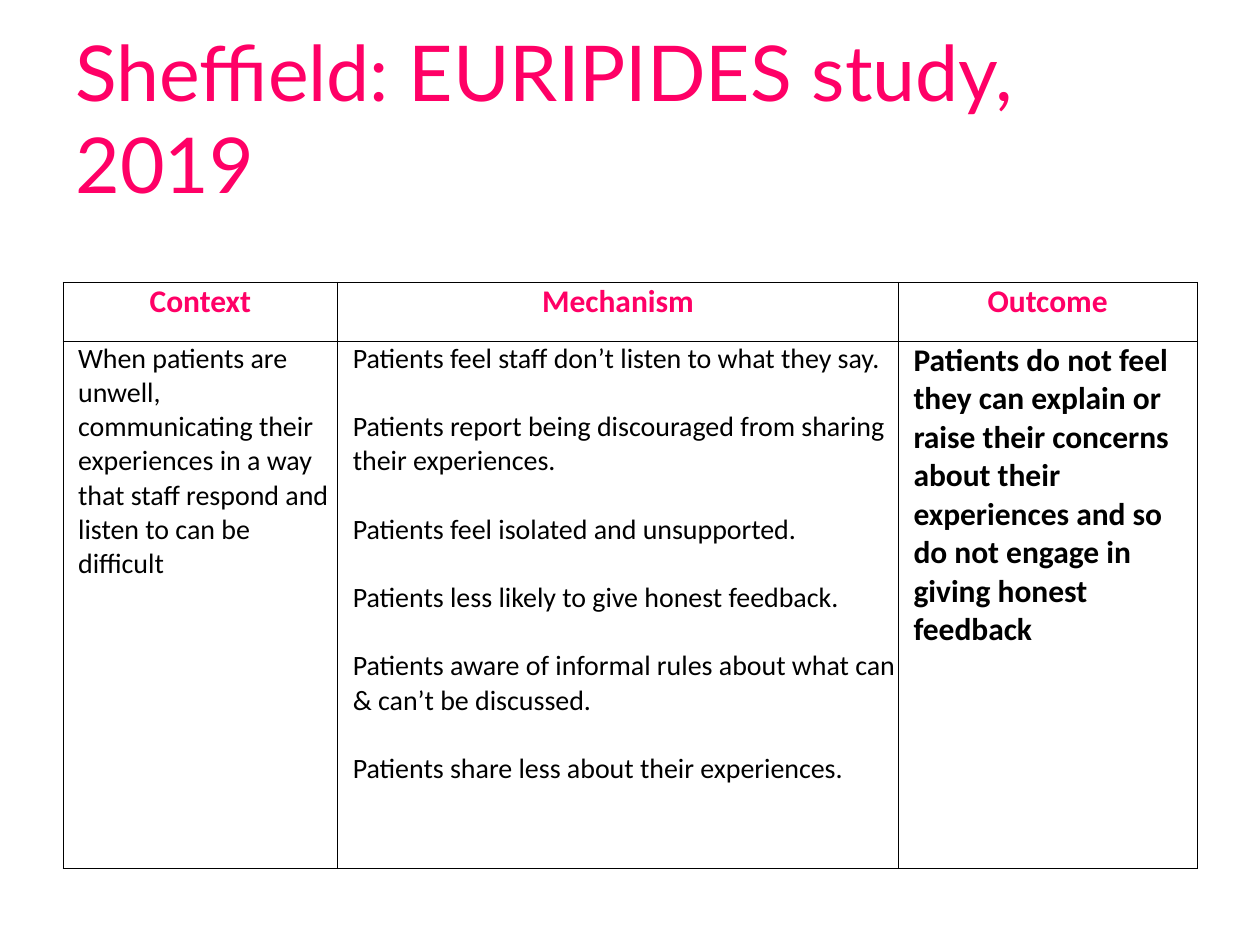
from lxml.etree import SubElement as Sub
from pptx import Presentation
from pptx.dml.color import RGBColor as Rgb
from pptx.enum.text import MSO_ANCHOR as Anchor, PP_ALIGN as Align
from pptx.oxml.ns import qn
from pptx.util import Inches, Pt

HUES = {"pink": "FF0066", "black": "000000"}
TITLE = "Sheffield: EURIPIDES study, 2019"
HEADS = ["Context", "Mechanism", "Outcome"]
BODY = [
    ["When patients are unwell, communicating their experiences in a way "
     "that staff respond and listen to can be difficult"],
    ["Patients feel staff don’t listen to what they say.",
     "Patients report being discouraged from sharing their experiences.",
     "Patients feel isolated and unsupported.",
     "Patients less likely to give honest feedback.",
     "Patients aware of informal rules about what can & can’t be discussed.",
     "Patients share less about their experiences."],
    ["Patients do not feel they can explain or raise their concerns about "
     "their experiences and so do not engage in giving honest feedback"],
]
STYLES = [{"size": 16}, {"size": 16, "gap": 19.5}, {"size": 18, "bold": True}]
WIDTHS = [2.18, 4.45, 2.37]
HEIGHTS = [0.47, 4.18]
LEFT, TOP = 0.5, 2.24


def write(frame, lines, size, hue="black", font="Calibri", bold=False,
          align=Align.LEFT, indent=0, gap=0):
    for i, line in enumerate(lines):
        para = frame.add_paragraph() if i else frame.paragraphs[0]
        para.alignment = align
        para.space_before = Pt(gap if i else 0)
        para._p.get_or_add_pPr().set("marL", str(Inches(indent)))
        run = para.add_run()
        run.text = line
        run.font.name = font
        run.font.size = Pt(size)
        run.font.bold = bold
        run.font.color.rgb = Rgb.from_string(HUES[hue])


def frame_cell(cell):
    cell.margin_left = cell.margin_right = 0
    cell.margin_top = cell.margin_bottom = 0
    props = cell._tc.get_or_add_tcPr()
    for side in ("a:lnL", "a:lnR", "a:lnT", "a:lnB"):
        edge = Sub(props, qn(side), w=str(Pt(0.5)))
        fill = Sub(edge, qn("a:solidFill"))
        Sub(fill, qn("a:srgbClr"), val=HUES["black"])
    cell.fill.background()


deck = Presentation()
deck.slide_width, deck.slide_height = Inches(10), Inches(7.5)
slide = deck.slides.add_slide(deck.slide_layouts[6])

box = slide.shapes.add_textbox(Inches(LEFT), Inches(0.3), Inches(9), Inches(1.25))
box.text_frame.word_wrap = True
box.text_frame.vertical_anchor = Anchor.MIDDLE
write(box.text_frame, [TITLE], 44, hue="pink", font="Lato")

table = slide.shapes.add_table(
    len(HEIGHTS), len(WIDTHS), Inches(LEFT), Inches(TOP),
    Inches(sum(WIDTHS)), Inches(sum(HEIGHTS))).table
table.first_row = table.horz_banding = False
for row, high in zip(table.rows, HEIGHTS):
    row.height = Inches(high)
for col, wide in enumerate(WIDTHS):
    table.columns[col].width = Inches(wide)
    head, body = table.cell(0, col), table.cell(1, col)
    frame_cell(head)
    frame_cell(body)
    write(head.text_frame, [HEADS[col]], 18, hue="pink", bold=True,
          align=Align.CENTER)
    write(body.text_frame, BODY[col], indent=0.12, **STYLES[col])

deck.save("out.pptx")
